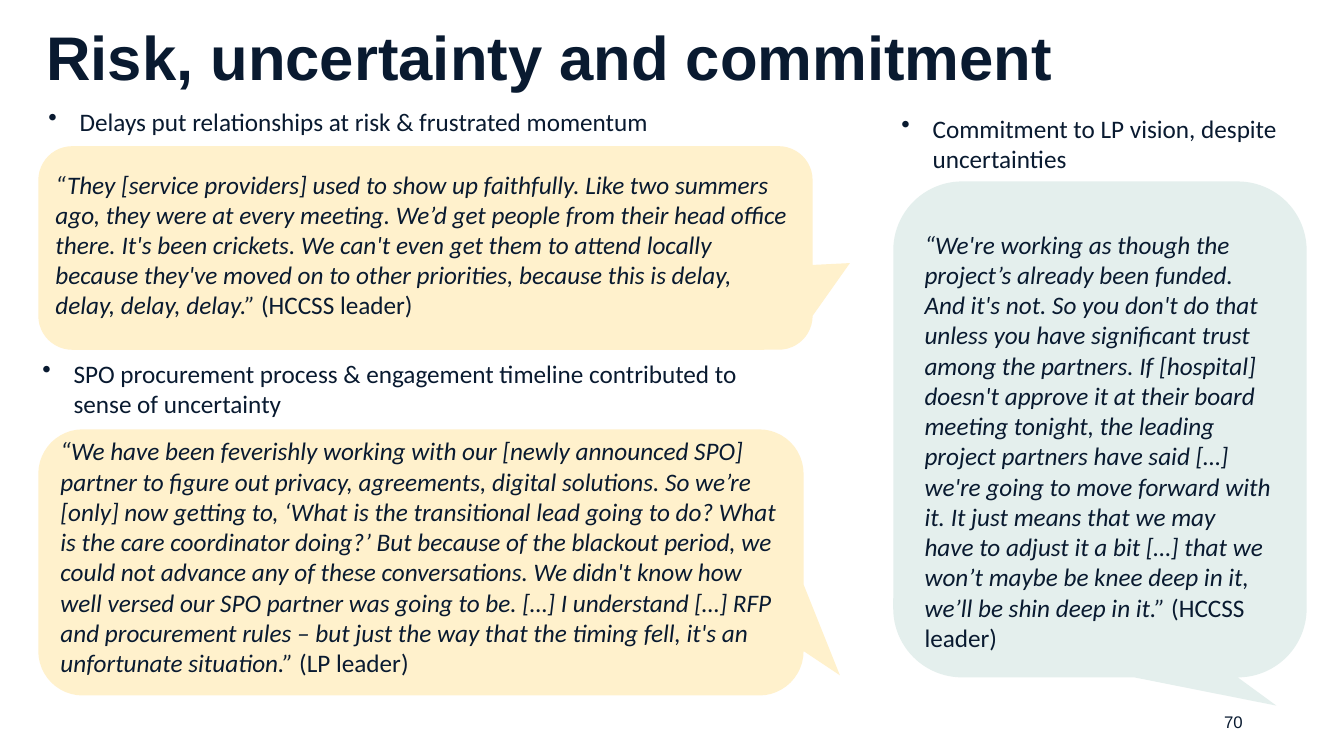
import pptx
import pptx.util
import pptx.dml.color
import pptx.enum.shapes
import pptx.enum.text
from dataclasses import dataclass
from lxml import etree
from pptx.util import Inches


@dataclass(frozen=True)
class Theme:
    ink: str = "091A30"
    cream: str = "FFF1CC"
    mint: str = "E4EFED"
    head: str = "Arial"
    body: str = "Calibri"
    title: int = 44
    text: int = 18
    page: int = 12


THEME = Theme()
HANG = 0.31

DELAY = "Delays put relationships at risk & frustrated momentum"
CRICKETS = (
    "“They [service providers] used to show up faithfully. Like two summers "
    "ago, they were at every meeting. We’d get people from their head office "
    "there. It's been crickets. We can't even get them to attend locally "
    "because they've moved on to other priorities, because this is delay,\n"
    "delay, delay, delay.” "
)
PROCESS = (
    "SPO procurement process & engagement timeline contributed to\n"
    "sense of uncertainty"
)
BLACKOUT = (
    "“We have been feverishly working with our [newly announced SPO] "
    "partner to figure out privacy, agreements, digital solutions. So we’re "
    "[only] now getting to, ‘What is the transitional lead going to do? What "
    "is the care coordinator doing?’ But because of the blackout period, we "
    "could not advance any of these conversations. We didn't know how\n"
    "well versed our SPO partner was going to be. […] I understand […] RFP "
    "and procurement rules – but just the way that the timing fell, it's an "
    "unfortunate situation.” "
)
VISION = "Commitment to LP vision, despite uncertainties"
TRUST = (
    "“We're working as though the project’s already been funded.\n"
    "And it's not. So you don't do that unless you have significant trust "
    "among the partners. If [hospital] doesn't approve it at their board "
    "meeting tonight, the leading project partners have said […]\n"
    "we're going to move forward with it. It just means that we may\n"
    "have to adjust it a bit […] that we won’t maybe be knee deep in it, "
    "we’ll be shin deep in it.” "
)


def paint(fill, color):
    fill.solid()
    fill.fore_color.rgb = pptx.dml.color.RGBColor.from_string(color)


def bubble(slide, left, top, width, height, tip, color):
    """Draw a rounded callout whose tail ends at tip (x, y)."""
    shape = slide.shapes.add_shape(
        pptx.enum.shapes.MSO_SHAPE.ROUNDED_RECTANGULAR_CALLOUT,
        Inches(left), Inches(top), Inches(width), Inches(height),
    )
    shape.adjustments[0] = (tip[0] - left) / width - 0.5
    shape.adjustments[1] = (tip[1] - top) / height - 0.5
    shape.shadow.inherit = False
    paint(shape.fill, color)
    shape.line.fill.background()


def frame(slide, left, top, width, height, inset=0.01):
    box = slide.shapes.add_textbox(
        Inches(left), Inches(top), Inches(width), Inches(height)
    )
    body = box.text_frame
    body.word_wrap = True
    body.vertical_anchor = pptx.enum.text.MSO_ANCHOR.TOP
    body.margin_left = body.margin_right = body.margin_bottom = 0
    body.margin_top = Inches(inset)
    return body


def write(para, text, font=THEME.body, size=THEME.text, bold=False, italic=False):
    """Add text to a paragraph; a newline becomes a line break."""
    for index, line in enumerate(text.split("\n")):
        if index:
            para.add_line_break()
        run = para.add_run()
        run.text = line
        run.font.name = font
        run.font.size = pptx.util.Pt(size)
        run.font.bold = bold
        run.font.italic = italic
        paint(run.font.fill, THEME.ink)


def indent(para, left, first=0):
    props = para._p.get_or_add_pPr()
    props.set("marL", str(Inches(left)))
    props.set("indent", str(Inches(first)))
    return props


def point(para, text, left):
    """Write a bulleted point with a hanging indent."""
    props = indent(para, left, -HANG)
    mark = etree.SubElement(props, pptx.oxml.ns.qn("a:buChar"))
    mark.set("char", "•")
    write(para, text)


def quote(body, text, who, left, gap):
    para = body.add_paragraph()
    indent(para, left)
    para.space_before = pptx.util.Pt(gap)
    write(para, text, italic=True)
    write(para, who)


def main():
    deck = pptx.Presentation()
    deck.slide_width = Inches(13.33)
    deck.slide_height = Inches(7.5)
    slide = deck.slides.add_slide(deck.slide_layouts[6])

    bubble(slide, 0.38, 1.45, 7.68, 2.02, (8.43, 2.61), THEME.cream)
    bubble(slide, 0.38, 4.26, 7.59, 2.64, (8.33, 6.7), THEME.cream)
    bubble(slide, 8.86, 1.8, 4.1, 4.92, (12.66, 7), THEME.mint)

    title = frame(slide, 0.46, 0.15, 10.01, 0.77, inset=0.04)
    write(title.paragraphs[0], "Risk, uncertainty and commitment",
          font=THEME.head, size=THEME.title, bold=True)

    risk = frame(slide, 0.4, 1.04, 7.43, 5.74)
    point(risk.paragraphs[0], DELAY, 0.39)
    quote(risk, CRICKETS, "(HCCSS leader)", 0.15, 23.4)
    para = risk.add_paragraph()
    para.space_before = pptx.util.Pt(27)
    point(para, PROCESS, 0.33)
    quote(risk, BLACKOUT, "(LP leader)", 0.2, 12.4)

    vision = frame(slide, 8.92, 1.11, 3.76, 5.1)
    point(vision.paragraphs[0], VISION, 0.33)
    quote(vision, TRUST, "(HCCSS leader)", 0.25, 39.8)

    page = frame(slide, 12.1, 7.06, 0.27, 0.21, inset=0)
    indent(page.paragraphs[0], 0.04)
    write(page.paragraphs[0], "70", font=THEME.head, size=THEME.page)

    deck.save("out.pptx")


if __name__ == "__main__":
    main()
